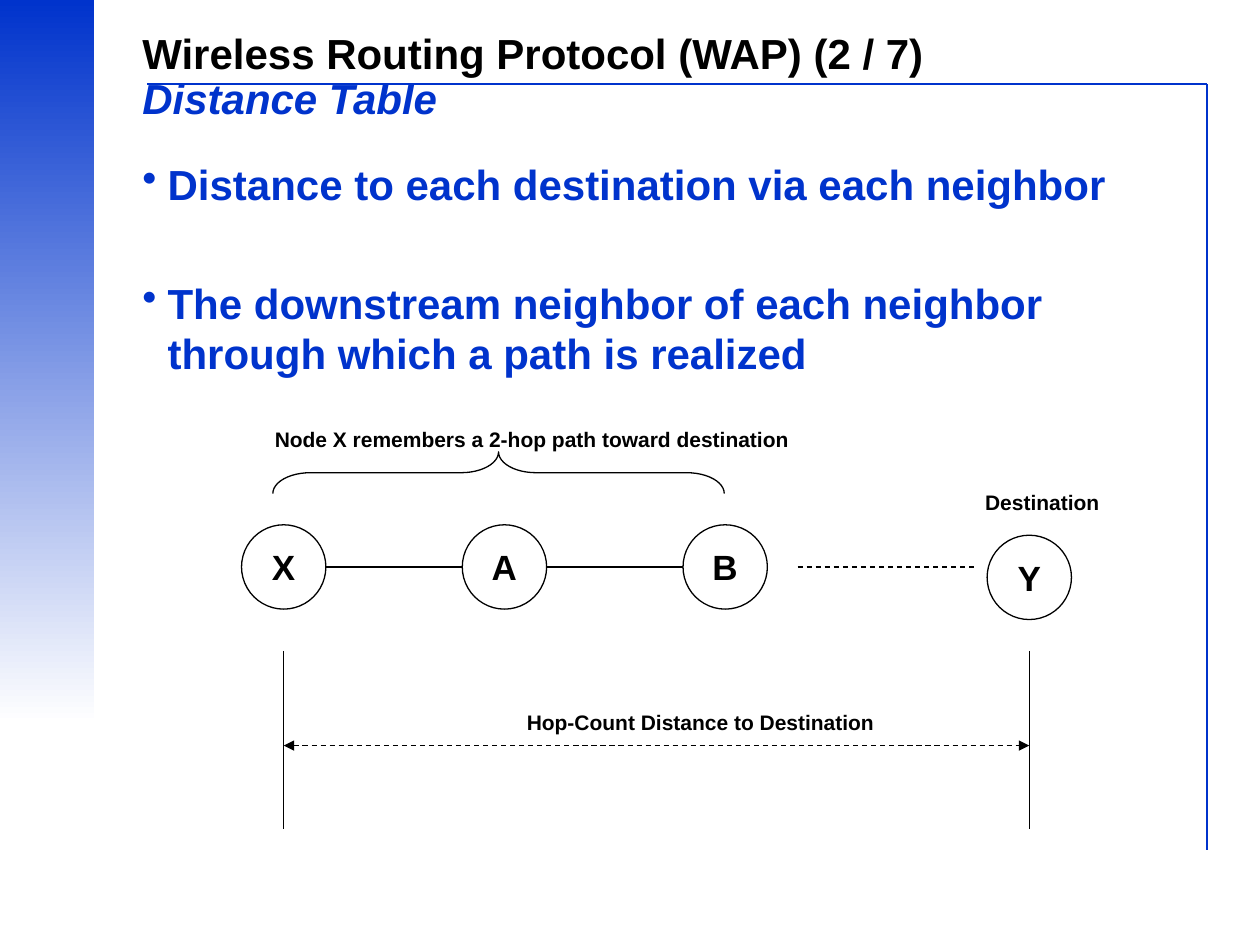
from dataclasses import dataclass
from typing import Optional

from lxml.etree import SubElement
from pptx import Presentation
from pptx.dml.color import RGBColor
from pptx.enum.dml import MSO_LINE
from pptx.enum.shapes import MSO_CONNECTOR, MSO_SHAPE
from pptx.enum.text import MSO_ANCHOR, MSO_AUTO_SIZE, PP_ALIGN
from pptx.oxml.ns import qn
from pptx.util import Cm, Pt

BLUE = RGBColor(0x00, 0x33, 0xCC)
BLACK = RGBColor(0x00, 0x00, 0x00)
WHITE = RGBColor(0xFF, 0xFF, 0xFF)

NODE_SIZE = 1.7
PATH_Y = 11.43
X_CENTER = 5.72
Y_CENTER = 20.75
HOP_GAP = 4.45
DISTANCE_Y = 15.03


@dataclass
class Node:
    name: str
    center_x: float
    center_y: float = PATH_Y


@dataclass
class Line:
    x1: float
    y1: float
    x2: float
    y2: float
    color: RGBColor = BLACK
    width: float = 0.75
    dash: Optional[MSO_LINE] = None
    arrows: bool = False


@dataclass
class Label:
    text: str
    left: float
    top: float
    width: float


NODES = [Node(name, X_CENTER + hop * HOP_GAP) for hop, name in enumerate("XAB")]
NODES.append(Node("Y", Y_CENTER, 11.64))

FRAME_LINES = [
    Line(2.97, 1.7, 24.33, 1.7, BLUE, 1),
    Line(24.33, 1.7, 24.33, 17.14, BLUE, 1),
]
HOP_LINES = [
    Line(start.center_x + NODE_SIZE / 2, PATH_Y, end.center_x - NODE_SIZE / 2, PATH_Y)
    for start, end in zip(NODES[:2], NODES[1:3])
]
DISTANCE_LINES = [
    Line(16.08, PATH_Y, 19.68, PATH_Y, dash=MSO_LINE.DASH),
    *[Line(x, 13.12, x, 16.72) for x in (X_CENTER, Y_CENTER)],
    Line(X_CENTER, DISTANCE_Y, Y_CENTER, DISTANCE_Y, dash=MSO_LINE.DASH, arrows=True),
]
LABELS = [
    Label("Destination", 19.61, 9.74, 2.82),
    Label("Hop-Count Distance to Destination", 10.37, 14.18, 7.52),
    Label("Node X remembers a 2-hop path toward destination", 5.29, 8.47, 10.9),
]
BULLETS = [
    "Distance to each destination via each neighbor",
    "The downstream neighbor of each neighbor through which a path is realized",
]


def apply_format(target, values: dict) -> None:
    for name, value in values.items():
        setattr(target, name, value)


def add_run(paragraph, text: str, size: float, color: RGBColor, italic: bool = False) -> None:
    run = paragraph.add_run()
    run.text = text
    apply_format(run.font, {"name": "Arial", "size": Pt(size), "bold": True, "italic": italic})
    run.font.color.rgb = color


def add_text_frame(slide, left: float, top: float, width: float, height: float):
    shape = slide.shapes.add_textbox(Cm(left), Cm(top), Cm(width), Cm(height))
    margins = {f"margin_{side}": 0 for side in ("left", "top", "right", "bottom")}
    apply_format(shape.text_frame, {"word_wrap": True, **margins})
    return shape.text_frame


def add_sidebar(slide) -> None:
    shape = slide.shapes.add_shape(MSO_SHAPE.RECTANGLE, 0, 0, Cm(1.9), Cm(14.6))
    shape.shadow.inherit = False
    shape.line.fill.background()
    shape.fill.gradient()
    shape.fill.gradient_angle = 270
    for stop, color, position in zip(shape.fill.gradient_stops, (BLUE, WHITE), (0, 1)):
        stop.color.rgb = color
        stop.position = position


def add_line(slide, line: Line) -> None:
    connector = slide.shapes.add_connector(
        MSO_CONNECTOR.STRAIGHT, Cm(line.x1), Cm(line.y1), Cm(line.x2), Cm(line.y2)
    )
    connector.line.color.rgb = line.color
    apply_format(connector.line, {"width": Pt(line.width), "dash_style": line.dash})
    if line.arrows:
        outline = connector.line._get_or_add_ln()
        for end in ("a:headEnd", "a:tailEnd"):
            SubElement(outline, qn(end), type="triangle")
    SubElement(connector._element.spPr, qn("a:effectLst"))


def add_outline_shape(slide, kind: MSO_SHAPE, left: float, top: float, width: float, height: float):
    shape = slide.shapes.add_shape(kind, Cm(left), Cm(top), Cm(width), Cm(height))
    shape.shadow.inherit = False
    shape.fill.background()
    shape.line.color.rgb = BLACK
    shape.line.width = Pt(0.75)
    return shape


def add_node(slide, node: Node) -> None:
    left, top = node.center_x - NODE_SIZE / 2, node.center_y - NODE_SIZE / 2
    shape = add_outline_shape(slide, MSO_SHAPE.OVAL, left, top, NODE_SIZE, NODE_SIZE)
    apply_format(shape.text_frame, {"word_wrap": False, "vertical_anchor": MSO_ANCHOR.MIDDLE})
    paragraph = shape.text_frame.paragraphs[0]
    paragraph.alignment = PP_ALIGN.CENTER
    add_run(paragraph, node.name, 20, BLACK)


def add_brace(slide) -> None:
    shape = add_outline_shape(slide, MSO_SHAPE.LEFT_BRACE, 9.63, 4.98, 0.84, 9.1)
    shape.rotation = 90
    shape.adjustments[0] = 0.9
    shape.adjustments[1] = 0.5


def add_label(slide, label: Label) -> None:
    shape = slide.shapes.add_textbox(Cm(label.left), Cm(label.top), Cm(label.width), Cm(0.76))
    apply_format(
        shape.text_frame, {"word_wrap": False, "auto_size": MSO_AUTO_SIZE.SHAPE_TO_FIT_TEXT}
    )
    add_run(shape.text_frame.paragraphs[0], label.text, 12, BLACK)


def add_title(slide) -> None:
    paragraph = add_text_frame(slide, 2.87, 0.66, 20.6, 2.1).paragraphs[0]
    paragraph.line_spacing = 0.9
    add_run(paragraph, "Wireless Routing Protocol (WAP) (2 / 7)", 24, BLACK)
    paragraph.add_line_break()
    add_run(paragraph, "Distance Table", 24, BLUE, italic=True)


def add_bullets(slide) -> None:
    text_frame = add_text_frame(slide, 2.87, 3.2, 20.6, 12.67)
    for index, text in enumerate(BULLETS):
        paragraph = text_frame.add_paragraph() if index else text_frame.paragraphs[0]
        paragraph.space_before = Pt(39 if index else 4.8)
        properties = paragraph._p.get_or_add_pPr()
        properties.set("marL", str(Cm(0.51)))
        properties.set("indent", str(Cm(-0.51)))
        bullet_color = SubElement(properties, qn("a:buClr"))
        SubElement(bullet_color, qn("a:srgbClr"), val=str(BLUE))
        SubElement(properties, qn("a:buChar"), char="•")
        add_run(paragraph, text, 24, BLUE)


def main() -> None:
    presentation = Presentation()
    presentation.slide_width, presentation.slide_height = Cm(25.4), Cm(19.05)
    slide = presentation.slides.add_slide(presentation.slide_layouts[6])
    add_sidebar(slide)
    for line in FRAME_LINES:
        add_line(slide, line)
    add_title(slide)
    add_bullets(slide)
    for node in NODES:
        add_node(slide, node)
    for line in HOP_LINES + DISTANCE_LINES:
        add_line(slide, line)
    add_brace(slide)
    for label in LABELS:
        add_label(slide, label)
    presentation.save("out.pptx")


if __name__ == "__main__":
    main()
